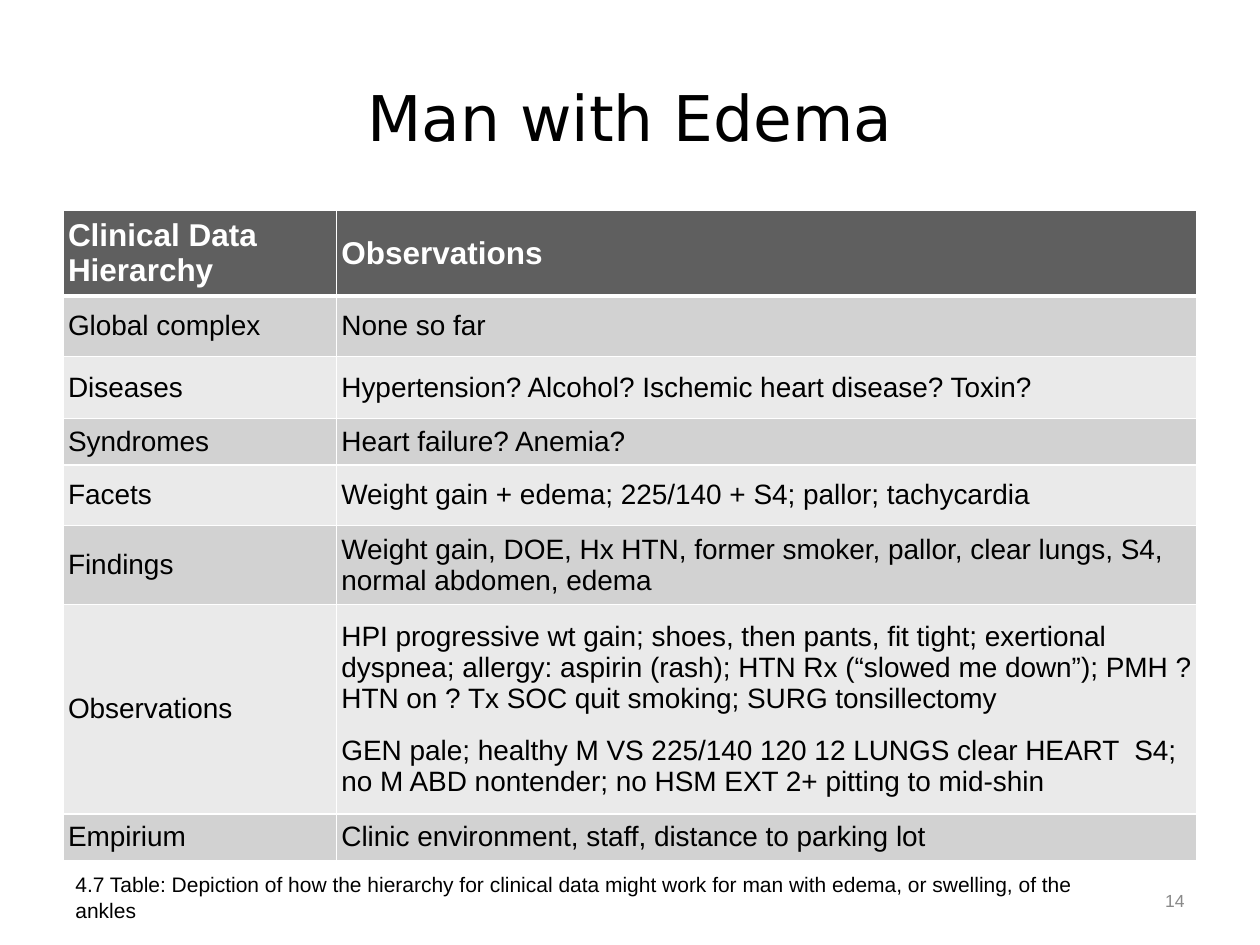
from pptx import Presentation
from pptx.dml.color import RGBColor
from pptx.enum.text import MSO_ANCHOR as Anchor, PP_ALIGN as Align
from pptx.oxml import parse_xml
from pptx.oxml.ns import nsdecls
from pptx.util import Inches, Pt

BLACK = RGBColor(0x00, 0x00, 0x00)
WHITE = RGBColor(0xFF, 0xFF, 0xFF)
GRAY = RGBColor(0x89, 0x89, 0x89)
HEADER = RGBColor(0x5F, 0x5F, 0x5F)
BANDS = (RGBColor(0xD2, 0xD2, 0xD2), RGBColor(0xEA, 0xEA, 0xEA))

COLUMN_WIDTHS = (2.17, 6.83)
ROW_HEIGHTS = (0.64, 0.48, 0.49, 0.37, 0.48, 0.63, 1.66, 0.37)
ROWS = (
    ("Clinical Data Hierarchy", "Observations"),
    ("Global complex", "None so far"),
    ("Diseases", "Hypertension? Alcohol? Ischemic heart disease? Toxin?"),
    ("Syndromes", "Heart failure? Anemia?"),
    ("Facets", "Weight gain + edema; 225/140 + S4; pallor; tachycardia"),
    ("Findings", "Weight gain, DOE, Hx HTN, former smoker, pallor, clear lungs, "
                 "S4, normal abdomen, edema"),
    ("Observations",
     "HPI progressive wt gain; shoes, then pants, fit tight; exertional dyspnea; "
     "allergy: aspirin (rash); HTN Rx (“slowed me down”); PMH ? HTN on ? Tx SOC "
     "quit smoking; SURG tonsillectomy\n"
     "GEN pale; healthy M VS 225/140 120 12 LUNGS clear HEART  S4; no M ABD "
     "nontender; no HSM EXT 2+ pitting to mid-shin"),
    ("Empirium", "Clinic environment, staff, distance to parking lot"),
)


class SlideBuilder:
    font = "Arial"
    cell_margin = Inches(0.04)

    def __init__(self, deck):
        self.page = deck.slides.add_slide(deck.slide_layouts[6])

    def paragraphs(self, frame, text, size, color=BLACK, bold=False, font=None,
                   align=Align.LEFT, gap=0):
        formats = {"name": font or self.font, "size": Pt(size), "bold": bold}
        lines = text.split("\n")
        for index, line in enumerate(lines):
            para = frame.paragraphs[0] if index == 0 else frame.add_paragraph()
            para.alignment = align
            if index < len(lines) - 1:
                para.space_after = Pt(gap)
            span = para.add_run()
            span.text = line
            for key, value in formats.items():
                setattr(span.font, key, value)
            span.font.color.rgb = color

    def text(self, area, text, size, anchor=Anchor.MIDDLE, **style):
        box = self.page.shapes.add_textbox(*map(Inches, area))
        frame = box.text_frame
        frame.word_wrap = True
        frame.vertical_anchor = anchor
        self.paragraphs(frame, text, size, **style)

    def borders(self, cell, widths):
        properties = cell._tc.get_or_add_tcPr()
        for side, width in widths.items():
            properties.append(parse_xml(
                f'<a:ln{side} {nsdecls("a")} w="{Pt(width)}"><a:solidFill>'
                f'<a:srgbClr val="{WHITE}"/></a:solidFill></a:ln{side}>'))

    def cell(self, cell, text, row):
        header = row == 0
        layout = {f"margin_{side}": self.cell_margin
                  for side in ("left", "right", "top", "bottom")}
        layout["vertical_anchor"] = Anchor.MIDDLE
        for key, value in layout.items():
            setattr(cell, key, value)
        self.borders(cell, {"L": 1, "R": 1, "T": 3 if row == 1 else 1,
                            "B": 3 if header else 1})
        cell.fill.solid()
        cell.fill.fore_color.rgb = HEADER if header else BANDS[(row - 1) % 2]
        self.paragraphs(cell.text_frame, text, 18 if header else 16,
                        color=WHITE if header else BLACK, bold=header, gap=12)

    def table(self, left, top, widths, heights, rows):
        area = map(Inches, (left, top, sum(widths), sum(heights)))
        table = self.page.shapes.add_table(len(heights), len(widths), *area).table
        for column, width in zip(table.columns, widths):
            column.width = Inches(width)
        for row, height in zip(table.rows, heights):
            row.height = Inches(height)
        for row, texts in enumerate(rows):
            for column, text in enumerate(texts):
                self.cell(table.cell(row, column), text, row)


def main():
    deck = Presentation()
    deck.slide_width, deck.slide_height = Inches(10), Inches(7.5)
    slide = SlideBuilder(deck)
    slide.text((0.5, 0.3, 9, 1.25), "Man with Edema", 36,
               font="DejaVu Sans", align=Align.CENTER)
    slide.table(0.5, 1.67, COLUMN_WIDTHS, ROW_HEIGHTS, ROWS)
    slide.text((0.5, 6.87, 8.35, 0.58),
               "4.7 Table: Depiction of how the hierarchy for clinical data might "
               "work for man with edema, or swelling, of the ankles",
               12, anchor=Anchor.TOP)
    slide.text((8.94, 6.85, 0.56, 0.6), "14", 10, color=GRAY, align=Align.RIGHT)
    deck.save("out.pptx")


if __name__ == "__main__":
    main()
